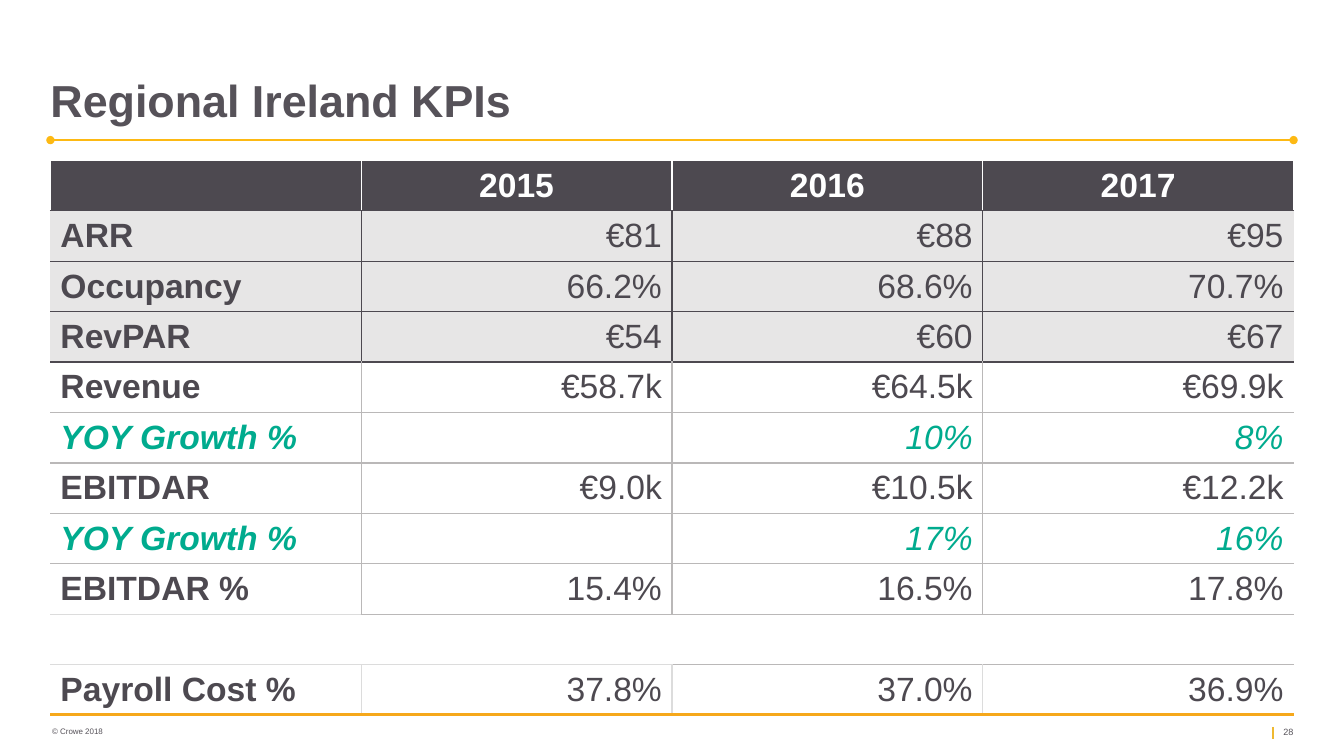
"""Build the Regional Ireland KPIs slide."""
from lxml import etree
from pptx import Presentation, util as u
from pptx.dml import color as col
from pptx.enum import shapes, text
from pptx.oxml import ns

DARK, GREY, LIGHT, WHITE = "4D4950", "BAB8B8", "DCDCDC", "FFFFFF"
TEXT, GREEN, SHADE = "565259", "00AB8E", "E7E6E6"

HEAD = ["", "2015", "2016", "2017"]
BODY = [
    ["ARR", "€81", "€88", "€95"],
    ["Occupancy", "66.2%", "68.6%", "70.7%"],
    ["RevPAR", "€54", "€60", "€67"],
    ["Revenue", "€58.7k", "€64.5k", "€69.9k"],
    ["YOY Growth %", "", "10%", "8%"],
    ["EBITDAR", "€9.0k", "€10.5k", "€12.2k"],
    ["YOY Growth %", "", "17%", "16%"],
    ["EBITDAR %", "15.4%", "16.5%", "17.8%"],
    ["", "", "", ""],
    ["Payroll Cost %", "37.8%", "37.0%", "36.9%"],
]
SIDES = [WHITE] + [DARK] * 3 + [GREY] * 5 + [None, LIGHT]
PALE = {(8, 0), (9, 0), (9, 1)}


def rgb(code):
    return col.RGBColor.from_string(code)


def put(item, values):
    for name, value in values.items():
        setattr(item, name, value)


def below(row, place):
    if row < 0:
        return WHITE
    if (row, place) in PALE:
        return LIGHT
    return DARK if row < 4 else GREY


def edges(row, place):
    side = SIDES[row]
    return {
        "a:lnL": side if place or row == 0 else None,
        "a:lnR": side if place < 3 or row == 0 else None,
        "a:lnT": below(row - 1, place),
        "a:lnB": below(row, place),
    }


class Deck:
    def __init__(self):
        self.show = Presentation()
        put(self.show, {"slide_width": u.Inches(13.33), "slide_height": u.Inches(7.5)})
        self.slide = self.show.slides.add_slide(self.show.slide_layouts[5])
        self.font = "Arial"

    def words(self, para, words, size, code, align=text.PP_ALIGN.LEFT, **style):
        para.alignment = align
        run = para.add_run()
        run.text = words
        put(run.font, {"name": self.font, "size": u.Pt(size), **style})
        run.font.color.rgb = rgb(code)

    def title(self, words, box):
        shape = self.slide.shapes.title
        put(shape, dict(zip(("left", "top", "width", "height"), map(u.Inches, box))))
        frame = shape.text_frame
        put(frame, {"margin_left": 0, "margin_right": 0, "word_wrap": True,
                    "auto_size": text.MSO_AUTO_SIZE.NONE,
                    "vertical_anchor": text.MSO_ANCHOR.MIDDLE})
        frame.paragraphs[0].line_spacing = 0.9
        self.words(frame.paragraphs[0], words, 32, TEXT, bold=True)

    def label(self, words, box, size):
        frame = self.slide.shapes.add_textbox(*map(u.Inches, box)).text_frame
        frame.word_wrap = True
        self.words(frame.paragraphs[0], words, size, TEXT)

    def line(self, start, end, code, width, ends=None):
        link = self.slide.shapes.add_connector(
            shapes.MSO_CONNECTOR.STRAIGHT, *map(u.Inches, start + end))
        link.line.color.rgb = rgb(code)
        link.line.width = u.Pt(width)
        if ends:
            for tag in ("a:headEnd", "a:tailEnd"):
                etree.SubElement(link.line._ln, ns.qn(tag), type=ends)
        etree.SubElement(link._element.spPr, ns.qn("a:effectLst"))

    def border(self, cell, lines):
        props = cell._tc.get_or_add_tcPr()
        for tag, code in lines.items():
            edge = etree.SubElement(props, ns.qn(tag), w=str(u.Pt(1)))
            if code:
                fill = etree.SubElement(edge, ns.qn("a:solidFill"))
                etree.SubElement(fill, ns.qn("a:srgbClr"), val=code)
            else:
                etree.SubElement(edge, ns.qn("a:noFill"))

    def cell(self, cell, words, row, place):
        cell.vertical_anchor = text.MSO_ANCHOR.MIDDLE
        self.border(cell, edges(row, place))
        cell.fill.solid()
        cell.fill.fore_color.rgb = rgb(DARK if row == 0 else SHADE if row < 4 else WHITE)
        if not words:
            return
        growth = row > 0 and BODY[row - 1][0].startswith("YOY")
        code = WHITE if row == 0 else GREEN if growth else DARK
        align = text.PP_ALIGN.LEFT
        if place:
            align = text.PP_ALIGN.RIGHT if row else text.PP_ALIGN.CENTER
        self.words(cell.text_frame.paragraphs[0], words, 24, code, align,
                   bold=row == 0 or place == 0, italic=growth)

    def table(self, rows, box):
        grid = self.slide.shapes.add_table(
            len(rows), len(rows[0]), *map(u.Inches, box)).table
        put(grid, {"first_row": False, "horz_banding": False})
        for row, words in enumerate(rows):
            for place, word in enumerate(words):
                self.cell(grid.cell(row, place), word, row, place)


def main():
    deck = Deck()
    deck.line((12.63, 7.21), (12.63, 7.33), "EFB931", 1.5)
    deck.label("28", (12.63, 7.16, 0.66, 0.21), 6.5)
    deck.label("© Crowe 2018", (0.42, 7.16, 2.64, 0.2), 5.7)
    deck.line((0.5, 1.39), (12.83, 1.39), "FDB913", 1, "oval")
    deck.table([HEAD] + BODY, (0.5, 1.59, 12.33, 5.5))
    deck.title("Regional Ireland KPIs", (0.5, 0.76, 12.33, 0.52))
    deck.line((0.5, 7.09), (12.83, 7.09), "F6A81B", 2.25)
    deck.show.save("out.pptx")


if __name__ == "__main__":
    main()
